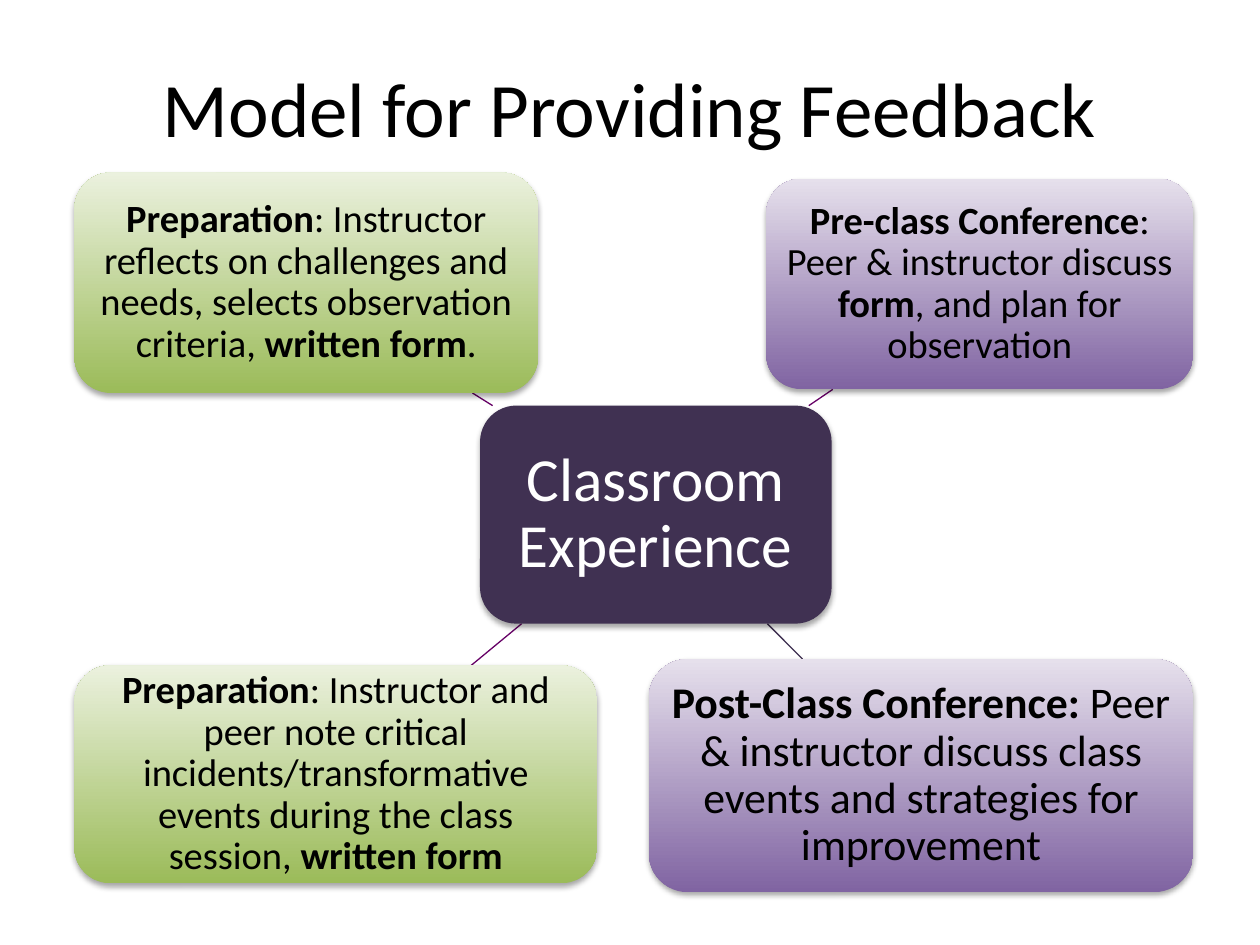
"""Build the feedback model slide: a central experience linked to four steps."""
from dataclasses import dataclass

from lxml.etree import SubElement
from pptx import Presentation
from pptx.dml.color import RGBColor as RGB
from pptx.enum.shapes import MSO_CONNECTOR as CONNECTOR, MSO_SHAPE as SHAPE
from pptx.enum.text import MSO_ANCHOR as ANCHOR, PP_ALIGN as ALIGN
from pptx.oxml import parse_xml
from pptx.oxml.ns import nsdecls, qn
from pptx.util import Pt


@dataclass(frozen=True)
class Theme:
    font: str = "Calibri"
    black: str = "000000"
    white: str = "FFFFFF"
    plum: str = "403152"
    magenta: str = "660066"
    green: tuple = ("9BBB59", "EBF1DE")
    purple: tuple = ("8064A2", "E6E0EC")
    title_size: int = 44
    center_size: int = 35
    large_size: int = 25
    body_size: int = 22


theme = Theme()

SHADOW = (
    f'<a:outerShdw {nsdecls("a")} blurRad="40000" dist="23000" dir="5400000" rotWithShape="0">'
    f'<a:srgbClr val="{theme.black}"><a:alpha val="35000"/></a:srgbClr></a:outerShdw>'
)


def write(shape, text, *, size, color=theme.black, inset=4.5, spacing=0.9, anchor=ANCHOR.MIDDLE):
    """Fill a shape with centred text in which ** switches bold on and off."""
    frame = shape.text_frame
    frame.word_wrap = True
    frame.vertical_anchor = anchor
    frame.margin_left = frame.margin_right = Pt(inset)
    frame.margin_top = frame.margin_bottom = Pt(inset)
    paragraph = frame.paragraphs[0]
    paragraph.alignment = ALIGN.CENTER
    paragraph.line_spacing = spacing
    for index, part in enumerate(text.split("**")):
        if part:
            run = paragraph.add_run()
            run.text = part
            run.font.name = theme.font
            run.font.size = Pt(size)
            run.font.bold = index % 2 == 1
            run.font.color.rgb = RGB.from_string(color)


def add_box(left, top, width, height, fill):
    """Add a shadowed rounded box with a solid colour or a (bottom, top) gradient."""
    box = slide.shapes.add_shape(SHAPE.ROUNDED_RECTANGLE, Pt(left), Pt(top), Pt(width), Pt(height))
    if isinstance(fill, str):
        box.fill.solid()
        box.fill.fore_color.rgb = RGB.from_string(fill)
    else:
        box.fill.gradient()
        box.fill.gradient_angle = 90
        for stop, color, position in zip(box.fill.gradient_stops, fill, (0, 1)):
            stop.color.rgb = RGB.from_string(color)
            stop.position = position
    box.line.fill.background()
    box.shadow.inherit = False
    box._element.spPr.find(qn("a:effectLst")).append(parse_xml(SHADOW))
    return box


presentation = Presentation()
presentation.slide_width, presentation.slide_height = Pt(720), Pt(540)
slide = presentation.slides.add_slide(presentation.slide_layouts[6])

title = slide.shapes.add_textbox(Pt(36), Pt(4.3), Pt(648), Pt(90))
write(title, "Model for Providing Feedback", size=theme.title_size,
      inset=7.2, spacing=1.0, anchor=ANCHOR.BOTTOM)

links = [
    (281.5, 231.8, 270, 224.6, theme.magenta),
    (462.2, 231.8, 475.9, 222.5, theme.magenta),
    (438.5, 356.4, 458.6, 376.6, theme.plum),
    (298.1, 356.4, 269.3, 380.2, theme.magenta),
]
for *ends, color in links:
    link = slide.shapes.add_connector(CONNECTOR.STRAIGHT, *map(Pt, ends))
    link.line.color.rgb = RGB.from_string(color)
    link.line.width = Pt(0.75)
    SubElement(link._element.spPr, qn("a:effectLst"))

center = add_box(274.3, 231.8, 200.9, 124.6, theme.plum)
write(center, "Classroom Experience", size=theme.center_size, color=theme.white, inset=7)

steps = [
    ((42.5, 98.6, 265, 126), theme.green, theme.body_size,
     "**Preparation**: Instructor reflects on challenges and needs, "
     "selects observation criteria, **written form**."),
    ((437.8, 102.2, 244.1, 120.2), theme.purple, theme.body_size,
     "**Pre-class Conference**: Peer & instructor discuss **form**, and plan for observation"),
    ((370.8, 376.6, 311, 133.2), theme.purple, theme.large_size,
     "**Post-Class Conference: **Peer & instructor discuss class events "
     "and strategies for improvement"),
    ((42.5, 380.2, 298.8, 124.6), theme.green, theme.body_size,
     "**Preparation**: Instructor and peer note critical incidents/transformative "
     "events during the class session, **written form**"),
]
for bounds, fill, size, text in steps:
    write(add_box(*bounds, fill), text, size=size)

presentation.save("out.pptx")
